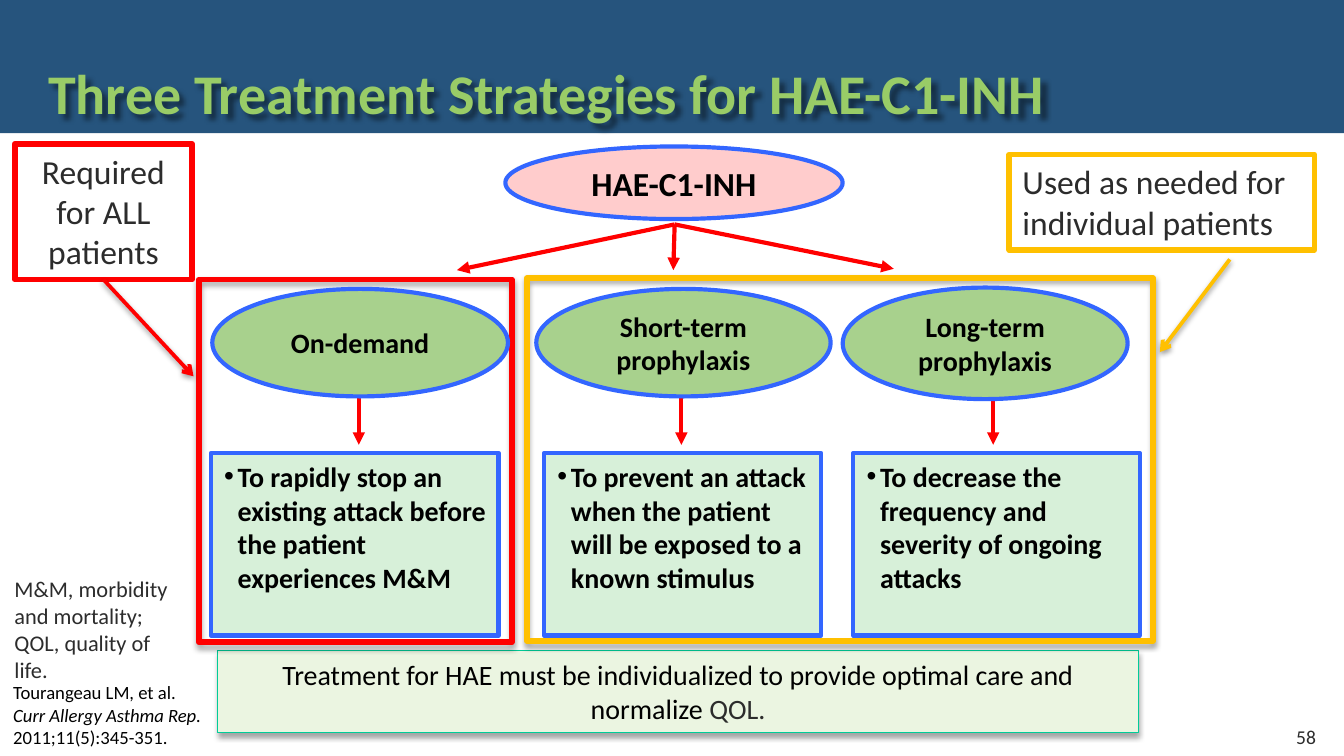
from lxml import etree
from pptx import Presentation
from pptx.dml.color import RGBColor
from pptx.enum.shapes import MSO_CONNECTOR, MSO_SHAPE
from pptx.enum.text import MSO_ANCHOR, PP_ALIGN
from pptx.oxml.ns import qn
from pptx.util import Inches, Pt

RECT, OVAL = MSO_SHAPE.RECTANGLE, MSO_SHAPE.OVAL
STRAIGHT = MSO_CONNECTOR.STRAIGHT
TOP, MIDDLE, BOTTOM = MSO_ANCHOR.TOP, MSO_ANCHOR.MIDDLE, MSO_ANCHOR.BOTTOM
LEFT, CENTER, RIGHT = PP_ALIGN.LEFT, PP_ALIGN.CENTER, PP_ALIGN.RIGHT
BOTTOM_SITE = 2

WIDTH = 10
HEIGHT = WIDTH * 9 / 16
FONT = "Calibri"
COLORS = {
    "band": "003767", "title": "99CC67", "black": "000000", "gray": "2C2C2C",
    "pink": "FFCCCC", "green": "A8D18D", "mint": "D7F0D9", "pale": "EBF5E1",
    "blue": "3366FF", "red": "FF0000", "amber": "FFC000", "teal": "00CC98",
}

TITLE = "Three Treatment Strategies for HAE-C1-INH"
ROOT = "HAE-C1-INH"
# label, ellipse (left, top, width, height), goal, goal box (left, width), arrow x
STRATEGIES = [
    ("On-demand", (1.58, 2.15, 2.2, 0.8),
     "To rapidly stop an existing attack before the patient experiences M&M",
     (1.57, 2.14), 2.67),
    ("Short-term\vprophylaxis", (3.99, 2.15, 2.19, 0.8),
     "To prevent an attack when the patient will be exposed to a known stimulus",
     (4.05, 2.06), 5.07),
    ("Long-term\vprophylaxis", (6.27, 2.14, 2.12, 0.83),
     "To decrease the frequency and severity of ongoing attacks",
     (6.35, 2.13), 7.39),
]
# text, note box, alignment, frame box, pointer start, pointer end, color
GROUPS = [
    ("Required for ALL patients", (0.11, 1.07, 1.32, 1.01), CENTER,
     (1.48, 2.08, 2.33, 2.7), None, (1.44, 2.8), "red"),
    ("Used as needed for individual patients", (7.51, 1.15, 2.27, 0.71), LEFT,
     (3.92, 2.07, 4.66, 2.7), (9.15, 1.93), (8.63, 2.62), "amber"),
]
SUMMARY = [
    ("Treatment for HAE must be individualized to provide optimal care and normalize ",
     "black", False),
    ("QOL.", "gray", False),
]
CITATION = [
    ("Tourangeau LM, et al. ", "black", False),
    ("Curr Allergy Asthma Rep.", "black", True),
    (" 2011;11(5):345-351.", "black", False),
]
ABBREVIATIONS = "M&M, morbidity and mortality; QOL, quality of life."

ROOT_BOX = (3.76, 1.09, 2.51, 0.54)
FORK = (5.02, 1.67)
FORK_ENDS = [(3.4, 2.01), (6.65, 2), (5.01, 2.01)]
GOAL_TOP, GOAL_HEIGHT, GOAL_GAP = 3.37, 1.36, 0.06

deck = Presentation()
deck.slide_width, deck.slide_height = Inches(WIDTH), Inches(HEIGHT)
page = deck.slides.add_slide(deck.slide_layouts[6])


def rgb(name):
    return RGBColor.from_string(COLORS[name])


def sub(parent, tag, **attributes):
    return etree.SubElement(parent, qn(tag), attributes)


def fill_effects(effects, alpha, blur=3.1, distance=1.8, angle=90):
    """Put a soft black shadow into an effect list."""
    shadow = sub(effects, "a:outerShdw", blurRad=str(Pt(blur)), dist=str(Pt(distance)),
                 dir=str(angle * 60000), rotWithShape="0")
    color = sub(shadow, "a:srgbClr", val=COLORS["black"])
    sub(color, "a:alpha", val=str(alpha * 1000))


def add_box(kind, place, fill=None, line=None, weight=2.25, shadow=False):
    box = page.shapes.add_shape(kind, *map(Inches, place))
    box.shadow.inherit = False
    if fill:
        box.fill.solid()
        box.fill.fore_color.rgb = rgb(fill)
    else:
        box.fill.background()
    if line:
        box.line.color.rgb = rgb(line)
        box.line.width = Pt(weight)
    else:
        box.line.fill.background()
    if shadow:
        fill_effects(box.element.spPr.find(qn("a:effectLst")), 35)
    return box


def write(box, runs, size, color="black", bold=False, align=LEFT, anchor=TOP,
          wrap=True, bullet=False):
    """Fill a box with one paragraph: a string, or (text, color, italic) runs."""
    frame = box.text_frame
    frame.word_wrap, frame.vertical_anchor = wrap, anchor
    para = frame.paragraphs[0]
    if isinstance(runs, str):
        para.text = runs
        runs = [(runs, color, False)]
    else:
        for text, _, _ in runs:
            para.add_run().text = text
    para.alignment = align
    if bullet:
        props = para._p.get_or_add_pPr()
        props.set("marL", str(Inches(0.1)))
        props.set("indent", str(-Inches(0.1)))
        sub(props, "a:buFont", typeface="Arial")
        sub(props, "a:buChar", char="•")
    for index, span in enumerate(para.runs):
        _, tint, italic = runs[min(index, len(runs) - 1)]
        span.font.name, span.font.size = FONT, Pt(size)
        span.font.bold, span.font.italic = bold, italic
        span.font.color.rgb = rgb(tint)
    return para


def add_text(place, runs, size, **style):
    box = page.shapes.add_textbox(*map(Inches, place))
    write(box, runs, size, **style)
    return box


def add_arrow(start, end, color="red", weight=2.25, head="triangle", shadow=False):
    arrow = page.shapes.add_connector(STRAIGHT, *map(Inches, (*start, *end)))
    arrow.line.color.rgb = rgb(color)
    arrow.line.width = Pt(weight)
    sub(arrow.line._get_or_add_ln(), "a:tailEnd", type=head)
    effects = sub(arrow._element.spPr, "a:effectLst")
    if shadow:
        fill_effects(effects, 38, distance=1.6)
    return arrow


band = add_box(RECT, (0, 0, WIDTH, 0.99), "band")
sub(band.element.spPr.find(qn("a:solidFill"))[0], "a:alpha", val="85000")
title = add_text((0.26, 0.25, 8.94, 0.74), TITLE, 30, color="title", bold=True,
                 anchor=BOTTOM)
title.text_frame.paragraphs[0].line_spacing = 0.9
fill_effects(sub(title.element.spPr, "a:effectLst"), 45, blur=3, distance=3, angle=45)

write(add_box(OVAL, ROOT_BOX, "pink", "blue"), ROOT, 18, bold=True,
      align=CENTER, anchor=MIDDLE, wrap=False)
for end in FORK_ENDS:
    add_arrow(FORK, end)

write(add_box(RECT, (1.62, 4.84, 6.85, 0.61), "pale", "teal", 0.75, shadow=True),
      SUMMARY, 15, align=CENTER, anchor=MIDDLE)

for text, note_place, align, frame_place, start, end, color in GROUPS:
    add_box(RECT, frame_place, line=color, weight=3, shadow=True)
    note = add_box(RECT, note_place, line=color, weight=3)
    write(note, text, 18, color="gray", align=align)
    pointer = add_arrow(start or end, end, color, 2, "arrow", shadow=True)
    if start is None:
        pointer.begin_connect(note, BOTTOM_SITE)

for label, oval, goal, (goal_left, goal_width), arrow_x in STRATEGIES:
    goal_box = add_box(RECT, (goal_left, GOAL_TOP, goal_width, GOAL_HEIGHT), "mint", "blue")
    write(goal_box, goal, 15, bold=True, bullet=True)
    goal_box.text_frame.margin_right = Inches(0.08)
    add_arrow((arrow_x, oval[1] + oval[3]), (arrow_x, GOAL_TOP - GOAL_GAP))
    write(add_box(OVAL, oval, "green", "blue"), label, 15, bold=True,
          align=CENTER, anchor=MIDDLE, wrap=False)

add_text((0, 5.02, 1.62, 0.61), CITATION, 10)
add_text((0.01, 4.23, 1.47, 0.91), ABBREVIATIONS, 12, color="gray")
add_text((9.43, 5.33, 0.46, 0.3), "58", 10.5, color="gray", align=RIGHT, anchor=MIDDLE)

deck.save("out.pptx")
